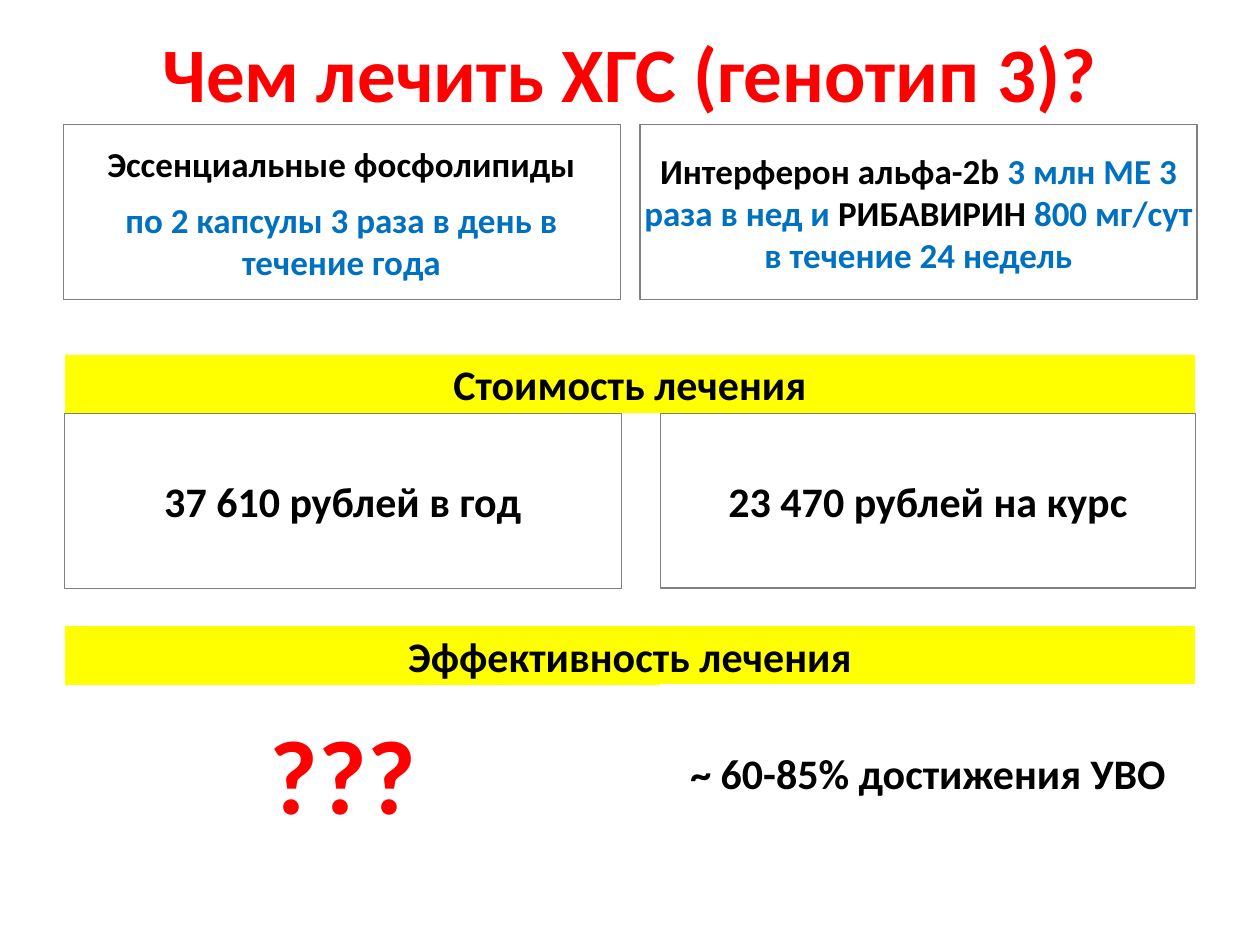
from dataclasses import dataclass

import pptx
import pptx.dml.color
import pptx.enum.shapes
import pptx.enum.text
import pptx.util

WIDE, HIGH = 10, 7.5
BLACK, BLUE, RED = "000000", "0070C0", "FF0000"
GRAY, WHITE, YELLOW = "808080", "FFFFFF", "FFFF00"

# Columns and rows, in percent of the slide's width and height
LEFT, RIGHT, EDGE = 5.1, 52.4, 94.9
HALF = 44.2
BOX, BAND = 18.5, 6.3
DRUG, COST, EFFECT = 13.2, 43.75, 72.5

Run = tuple[str, str]


@dataclass
class Panel:
    left: float
    top: float
    width: float
    height: float
    paras: list[list[Run]]
    size: float = 24
    line: str = GRAY
    weight: float = 0.25
    fill: str | None = None


def color(code: str) -> pptx.dml.color.RGBColor:
    return pptx.dml.color.RGBColor.from_string(code)


def place(left: float, top: float, width: float, height: float) -> list[int]:
    """Turn percent of the slide into lengths."""
    shares = (left, WIDE), (top, HIGH), (width, WIDE), (height, HIGH)
    return [pptx.util.Inches(part * full / 100) for part, full in shares]


def write(frame, paras: list[list[Run]], size: float, gap: float, inset: float) -> None:
    frame.word_wrap = True
    frame.vertical_anchor = pptx.enum.text.MSO_ANCHOR.MIDDLE
    frame.margin_left = frame.margin_right = pptx.util.Inches(inset)
    frame.margin_top = frame.margin_bottom = pptx.util.Inches(inset / 2)
    for index, runs in enumerate(paras):
        para = frame.add_paragraph() if index else frame.paragraphs[0]
        para.alignment = pptx.enum.text.PP_ALIGN.CENTER
        para.space_before = pptx.util.Pt(gap)
        for text, tint in runs:
            run = para.add_run()
            run.text = text
            run.font.name = "Calibri"
            run.font.size = pptx.util.Pt(size)
            run.font.bold = True
            run.font.color.rgb = color(tint)


def draw(slide, panel: Panel) -> None:
    area = place(panel.left, panel.top, panel.width, panel.height)
    shape = slide.shapes.add_shape(pptx.enum.shapes.MSO_SHAPE.RECTANGLE, *area)
    shape.shadow.inherit = False
    if panel.fill:
        shape.fill.solid()
        shape.fill.fore_color.rgb = color(panel.fill)
    else:
        shape.fill.background()
    shape.line.color.rgb = color(panel.line)
    shape.line.width = pptx.util.Pt(panel.weight)
    write(shape.text_frame, panel.paras, panel.size, gap=8, inset=0)


def band(top: float, text: str) -> Panel:
    """A yellow heading that ends where the row of boxes at top starts."""
    return Panel(LEFT, top - BAND, EDGE - LEFT, BAND, [[(text, BLACK)]],
                 line=WHITE, fill=YELLOW)


def pair(top: float, first: Run, second: Run, line: str, size: float = 24) -> list[Panel]:
    """Two boxes side by side; size is that of the first one's text."""
    return [
        Panel(LEFT, top, HALF, BOX, [[first]], size, line),
        Panel(RIGHT, top, EDGE - RIGHT, BOX, [[second]], 24, line, 0.75),
    ]


PANELS = [
    Panel(5, DRUG, HALF, BOX, [
        [("Эссенциальные фосфолипиды", BLACK)],
        [("по 2 капсулы 3 раза в день в течение года", BLUE)],
    ], size=20),
    Panel(95 - HALF, DRUG, HALF, BOX, [[
        ("Интерферон альфа-2b ", BLACK),
        ("3 млн МЕ 3 раза в нед и", BLUE),
        (" РИБАВИРИН ", BLACK),
        ("800 мг/сут в течение 24 недель", BLUE),
    ]], size=20, weight=0.75),
    band(COST, "Стоимость лечения"),
    *pair(COST, ("37 610 рублей в год", BLACK),
          ("23 470 рублей на курс", BLACK), GRAY),
    band(EFFECT, "Эффективность лечения"),
    *pair(EFFECT, ("???", RED), ("~ 60-85% достижения УВО", BLACK), WHITE, 60),
]


def main() -> None:
    deck = pptx.Presentation()
    deck.slide_width = pptx.util.Inches(WIDE)
    deck.slide_height = pptx.util.Inches(HIGH)
    slide = deck.slides.add_slide(deck.slide_layouts[6])
    title = slide.shapes.add_textbox(*place(5, 2, 90, 11.2))
    write(title.text_frame, [[("Чем лечить ХГС (генотип 3)?", RED)]],
          size=44, gap=0, inset=0.1)
    for panel in PANELS:
        draw(slide, panel)
    deck.save("out.pptx")


if __name__ == "__main__":
    main()
